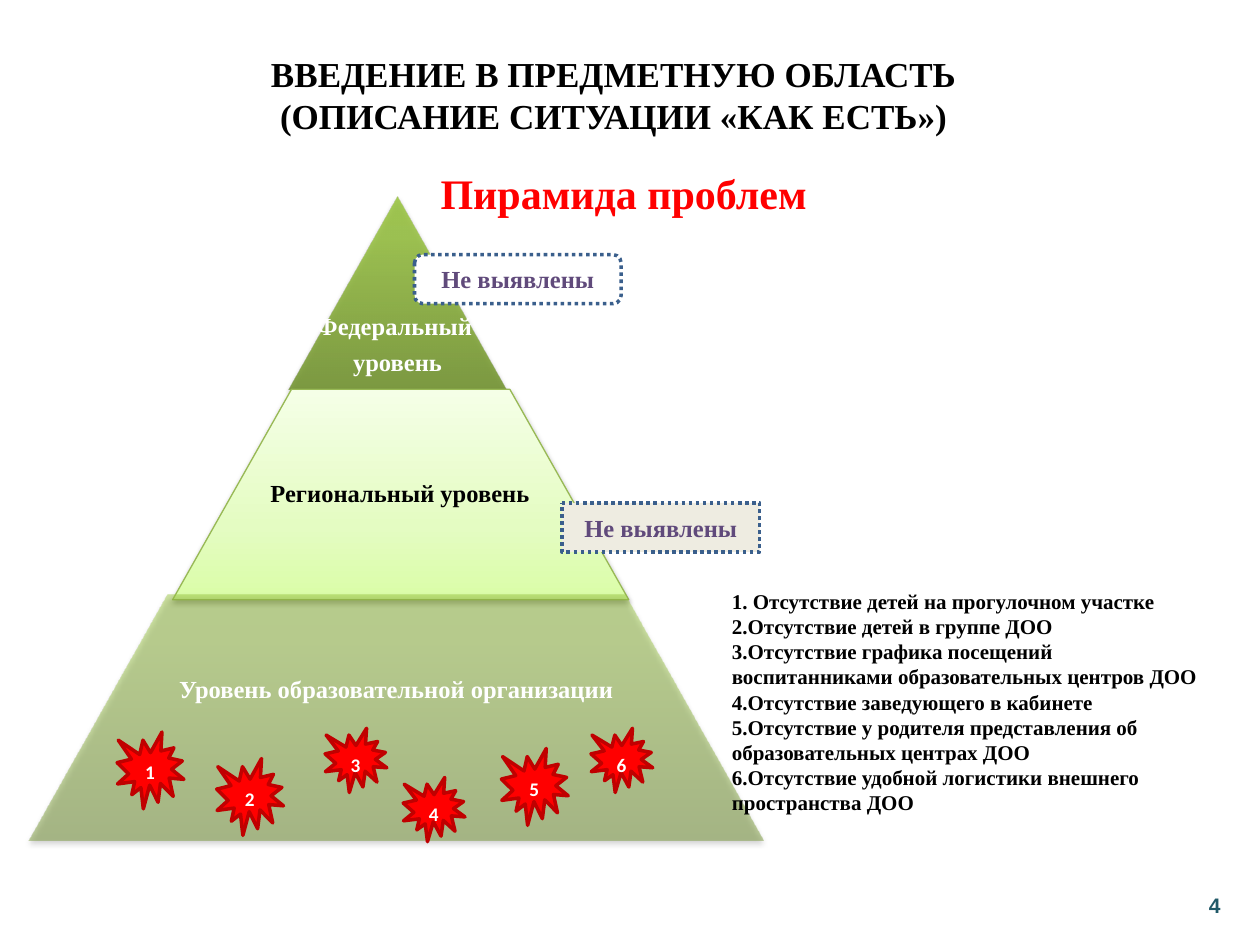
from lxml.etree import SubElement
from pptx import Presentation
from pptx.dml.color import RGBColor
from pptx.enum.dml import MSO_LINE
from pptx.enum.shapes import MSO_SHAPE
from pptx.enum.text import MSO_ANCHOR, PP_ALIGN
from pptx.oxml.ns import qn
from pptx.util import Inches, Pt

RED = RGBColor(0xFF, 0x00, 0x00)
DARK_RED = RGBColor(0xC0, 0x00, 0x00)
BLACK = RGBColor(0x00, 0x00, 0x00)
WHITE = RGBColor(0xFF, 0xFF, 0xFF)
TEAL = RGBColor(0x21, 0x59, 0x68)
PURPLE = RGBColor(0x60, 0x4A, 0x7B)
BLUE = RGBColor(0x3A, 0x5F, 0x8C)
CREAM = RGBColor(0xEE, 0xEC, 0xE1)
GREEN = RGBColor(0x98, 0xB9, 0x55)
SERIF = "Times New Roman"

# Content
HEADING = "ВВЕДЕНИЕ В ПРЕДМЕТНУЮ ОБЛАСТЬ\v(ОПИСАНИЕ СИТУАЦИИ «КАК ЕСТЬ»)"
SUBTITLE = "Пирамида проблем"
PAGE_NUMBER = "4"
PROBLEMS = [
    "1. Отсутствие детей на прогулочном участке",
    "Отсутствие детей в группе ДОО",
    "Отсутствие графика посещений воспитанниками образовательных центров ДОО",
    "Отсутствие заведующего в кабинете",
    "Отсутствие у родителя представления об образовательных центрах ДОО",
    "Отсутствие удобной логистики внешнего пространства ДОО",
]


def olive(opacity):
    return [(0, "779737", opacity), (80, "9BC348", opacity), (100, "9DC746", opacity)]


PALE = [(0, "DAFDA7", 100), (35, "E4FCC2", 100), (100, "F5FFE7", 100)]
# Tier area, gradient, outline, label lines, label area, colour, anchor, bottom inset
TIERS = [
    ((2.29, 1.56, 1.73, 1.53), olive(90), None, ["Федеральный ", "уровень"],
     (2.29, 1.56, 1.73, 1.53), WHITE, MSO_ANCHOR.BOTTOM, 0.1),
    ((1.37, 3.09, 3.62, 1.67), PALE, GREEN, ["Региональный уровень"],
     (2, 3.09, 2.35, 1.67), BLACK, MSO_ANCHOR.MIDDLE, 0.02),
    ((0.23, 4.72, 5.83, 1.95), olive(50), None, ["Уровень образовательной организации"],
     (1.25, 4.72, 3.79, 1.95), WHITE, MSO_ANCHOR.MIDDLE, 0.45),
]
# Note area, fill, corner rounding
NOTE = "Не выявлены"
NOTES = [((4.46, 3.99, 1.57, 0.39), CREAM, 0), ((3.29, 2.02, 1.64, 0.39), WHITE, 0.17)]
# Burst places in numbered order, with the size of each
LARGE, SMALL = (0.53, 0.61), (0.49, 0.51)
BURSTS = [((0.93, 5.81), LARGE), ((1.72, 6.02), LARGE), ((2.58, 5.78), SMALL),
          ((3.2, 6.17), SMALL), ((3.98, 5.94), LARGE), ((4.69, 5.78), SMALL)]


def write(shape, lines, size, color, font=SERIF, align=PP_ALIGN.CENTER,
          frame_format=None, para_format=None):
    frame = shape.text_frame
    for name, value in {"word_wrap": True, **(frame_format or {})}.items():
        setattr(frame, name, value)
    frame.text = "\n".join(lines)
    for para in frame.paragraphs:
        for name, value in {"alignment": align, **(para_format or {})}.items():
            setattr(para, name, value)
        for span in para.runs:
            for name, value in {"name": font, "size": Pt(size), "bold": True}.items():
                setattr(span.font, name, value)
            span.font.color.rgb = color


def add_text(page, area, lines, size, color, **options):
    box = page.shapes.add_textbox(*map(Inches, area))
    write(box, lines, size, color, **options)
    return box


def add_shape(page, kind, area, fill=None, line=None, width=2):
    shape = page.shapes.add_shape(kind, *map(Inches, area))
    shape.shadow.inherit = False
    if fill is not None:
        shape.fill.solid()
        shape.fill.fore_color.rgb = fill
    if line is None:
        shape.line.fill.background()
    else:
        shape.line.color.rgb = line
        shape.line.width = Pt(width)
    return shape


def add_color(parent, color, opacity):
    node = SubElement(parent, qn("a:srgbClr"), val=color)
    SubElement(node, qn("a:alpha"), val=str(opacity * 1000))


def set_gradient(shape, stops):
    shape.fill.gradient()
    shape.fill.gradient_angle = 90
    stop_list = shape.element.spPr.find(".//" + qn("a:gsLst"))
    for old in list(stop_list):
        stop_list.remove(old)
    for place, color, opacity in stops:
        add_color(SubElement(stop_list, qn("a:gs"), pos=str(place * 1000)), color, opacity)


def add_shadow(shape):
    effects = shape.element.spPr.find(qn("a:effectLst"))
    shadow = SubElement(effects, qn("a:outerShdw"), blurRad=str(Pt(3.1)),
                        dist=str(Pt(1.8)), dir="5400000", rotWithShape="0")
    add_color(shadow, "000000", 35)


def number_from_two(para):
    props = para._p.get_or_add_pPr()
    props.set("marL", "0")
    props.set("indent", str(Inches(-0.25)))
    SubElement(props, qn("a:buAutoNum"), type="arabicPeriod", startAt="2")


def main():
    deck = Presentation()
    deck.slide_width, deck.slide_height = Inches(10), Inches(7.5)
    page = deck.slides.add_slide(deck.slide_layouts[6])
    middle = {"vertical_anchor": MSO_ANCHOR.MIDDLE}

    # Headings and page number
    add_text(page, (0.2, 1.23, 9.5, 0.6), [SUBTITLE], 24, RED, frame_format=middle)
    add_text(page, (9.45, 7.03, 0.38, 0.31), [PAGE_NUMBER], 12, TEAL, font="Arial",
             frame_format=middle)
    add_text(page, (0.12, 0.44, 9.5, 0.92), [HEADING], 20, BLACK,
             frame_format={**middle, "margin_top": 0, "margin_bottom": Inches(0.3)})

    # Pyramid tiers, each with its label
    for area, stops, outline, lines, label_area, color, anchor, bottom in TIERS:
        tier = add_shape(page, MSO_SHAPE.TRAPEZOID, area, line=outline, width=0.75)
        tier.adjustments[0] = 0.565
        set_gradient(tier, stops)
        add_shadow(tier)
        margins = {f"margin_{side}": Inches(0.02) for side in ("left", "top", "right")}
        add_text(page, label_area, lines, 14, color,
                 frame_format={**margins, "margin_bottom": Inches(bottom),
                               "vertical_anchor": anchor},
                 para_format={"line_spacing": 0.9, "space_after": Pt(5.6)})

    # Dotted notes
    for area, fill, rounding in NOTES:
        note = add_shape(page, MSO_SHAPE.ROUNDED_RECTANGLE, area, fill, BLUE)
        note.adjustments[0] = rounding
        note.line.dash_style = MSO_LINE.ROUND_DOT
        write(note, [NOTE], 14, PURPLE, frame_format=middle)

    # Numbered bursts
    for number, (place, size) in enumerate(BURSTS, 1):
        burst = add_shape(page, MSO_SHAPE.EXPLOSION1, place + size, RED, DARK_RED)
        write(burst, [str(number)], 11, WHITE, font="Calibri",
              frame_format={"vertical_anchor": MSO_ANCHOR.TOP})

    # List of problems
    problems = add_text(page, (5.71, 4.62, 3.91, 2.22), PROBLEMS, 12, BLACK,
                        align=PP_ALIGN.LEFT)
    for para in problems.text_frame.paragraphs[1:]:
        number_from_two(para)

    deck.save("out.pptx")


if __name__ == "__main__":
    main()
